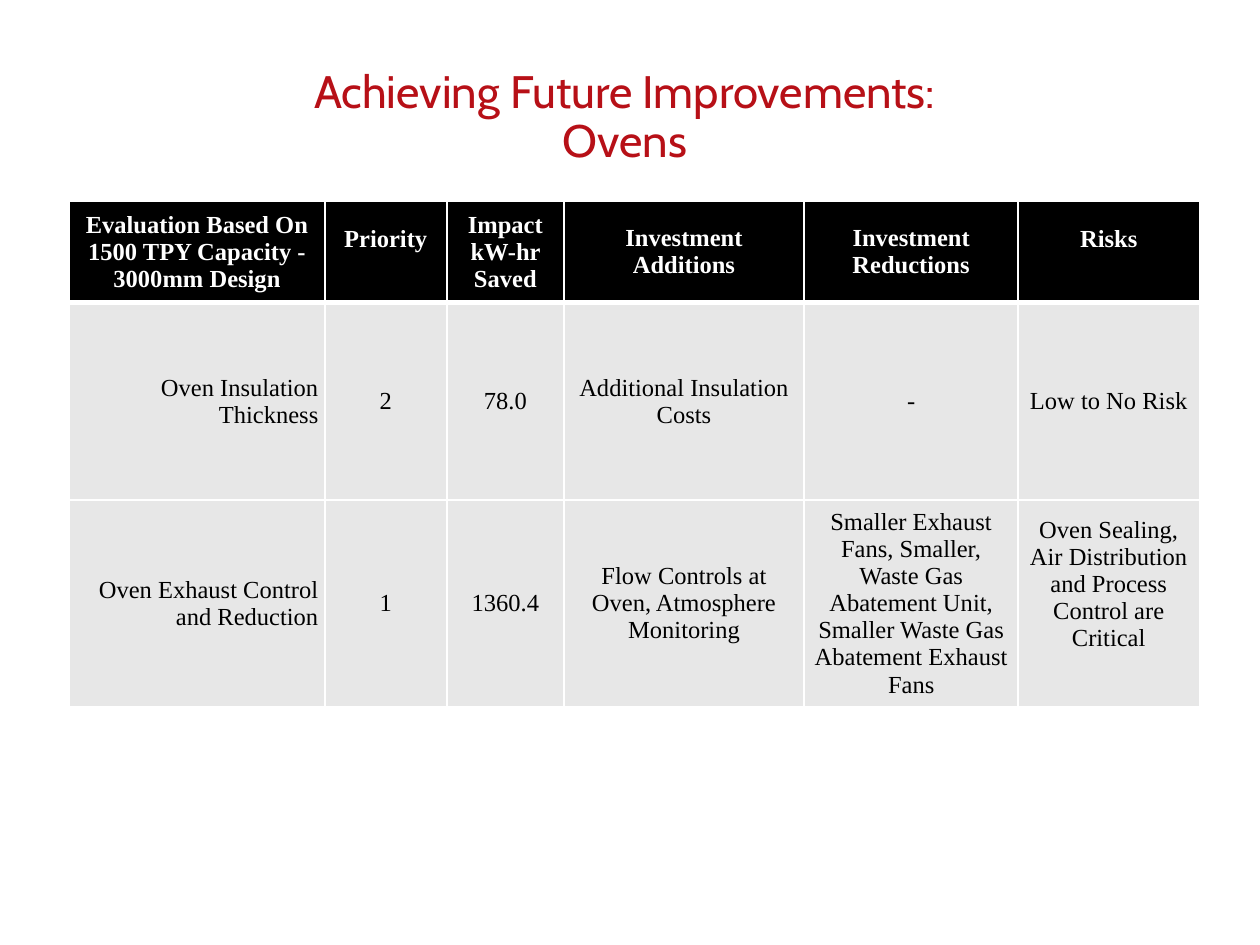
from dataclasses import dataclass

from lxml.etree import SubElement
from pptx import Presentation
from pptx.dml.color import RGBColor
from pptx.enum.text import MSO_ANCHOR, PP_ALIGN
from pptx.oxml.ns import qn
from pptx.util import Inches, Pt


@dataclass(frozen=True)
class Theme:
    title_font: str = "Cabin"
    table_font: str = "Times New Roman"
    title_size: int = 26
    table_size: int = 14
    red: str = "B71017"
    black: str = "000000"
    white: str = "FFFFFF"
    grey: str = "E7E7E7"
    thin_line: int = 1
    thick_line: int = 3


THEME = Theme()

COLUMN_WIDTHS = [2.03, 0.97, 0.93, 1.91, 1.7, 1.44]
ROW_HEIGHTS = [0.8, 1.57, 1.64]
ROWS = [
    ["Evaluation Based On 1500 TPY Capacity - 3000mm Design", "Priority",
     "Impact\nkW-hr Saved", "Investment\nAdditions", "Investment\nReductions",
     "Risks"],
    ["Oven Insulation Thickness", "2", "78.0", "Additional Insulation Costs",
     "-", "Low to No Risk"],
    ["Oven Exhaust Control and Reduction", "1", "1360.4",
     "Flow Controls at Oven, Atmosphere Monitoring",
     "Smaller Exhaust Fans, Smaller, Waste Gas Abatement Unit, "
     "Smaller Waste Gas Abatement Exhaust Fans",
     "Oven Sealing, Air Distribution and Process Control are Critical"],
]
# Bottom margins that lift the text of a cell above its middle
RAISED_CELLS = {(0, 1): 0.21, (0, 5): 0.21, (2, 5): 0.31}


def write_text(frame, text, *, font, size, color, bold=False,
               align=PP_ALIGN.CENTER, line_spacing=1.0):
    """Write each line of the text as one paragraph."""
    for index, line in enumerate(text.split("\n")):
        para = frame.paragraphs[0] if index == 0 else frame.add_paragraph()
        para.alignment = align
        para.line_spacing = line_spacing
        span = para.add_run()
        span.text = line
        span.font.name = font
        span.font.size = Pt(size)
        span.font.bold = bold
        span.font.color.rgb = RGBColor.from_string(color)


def set_borders(cell, top, bottom):
    """Draw white borders; top and bottom are widths in points."""
    properties = cell._tc.get_or_add_tcPr()
    widths = {"L": THEME.thin_line, "R": THEME.thin_line, "T": top, "B": bottom}
    for side, width in widths.items():
        line = SubElement(properties, qn(f"a:ln{side}"), w=str(Pt(width)))
        fill = SubElement(line, qn("a:solidFill"))
        SubElement(fill, qn("a:srgbClr"), val=THEME.white)


def add_title(page, left, top, width, height):
    box = page.shapes.add_textbox(left, top, width, height)
    box.text_frame.word_wrap = False
    write_text(box.text_frame, "Achieving Future Improvements:\nOvens",
               font=THEME.title_font, size=THEME.title_size, color=THEME.red,
               line_spacing=0.9)


def format_cell(cell, text, row, column):
    is_header = row == 0
    cell.margin_left = cell.margin_right = Inches(0.05)
    cell.margin_top = 0
    cell.margin_bottom = Inches(RAISED_CELLS.get((row, column), 0))
    cell.vertical_anchor = MSO_ANCHOR.MIDDLE
    set_borders(cell,
                top=THEME.thick_line if row == 1 else THEME.thin_line,
                bottom=THEME.thick_line if is_header else THEME.thin_line)
    cell.fill.solid()
    cell.fill.fore_color.rgb = RGBColor.from_string(
        THEME.black if is_header else THEME.grey)
    is_label = column == 0 and not is_header
    write_text(cell.text_frame, text, font=THEME.table_font,
               size=THEME.table_size, bold=is_header,
               color=THEME.white if is_header else THEME.black,
               align=PP_ALIGN.RIGHT if is_label else PP_ALIGN.CENTER)


def add_evaluation_table(page, left, top, width, height):
    table = page.shapes.add_table(len(ROWS), len(COLUMN_WIDTHS),
                                  left, top, width, height).table
    table.first_row = table.horz_banding = False
    for column, share in zip(table.columns, COLUMN_WIDTHS):
        column.width = int(width * share / sum(COLUMN_WIDTHS))
    for row, share in zip(table.rows, ROW_HEIGHTS):
        row.height = int(height * share / sum(ROW_HEIGHTS))
    for row, texts in enumerate(ROWS):
        for column, text in enumerate(texts):
            format_cell(table.cell(row, column), text, row, column)


def main():
    deck = Presentation()
    deck.slide_width, deck.slide_height = Inches(10), Inches(7.5)
    page = deck.slides.add_slide(deck.slide_layouts[6])
    add_title(page, Inches(2.39), Inches(0.5), Inches(5.14), Inches(0.88))
    add_evaluation_table(page, Inches(0.55), Inches(1.6),
                         Inches(8.97), Inches(4.01))
    deck.save("out.pptx")


if __name__ == "__main__":
    main()
